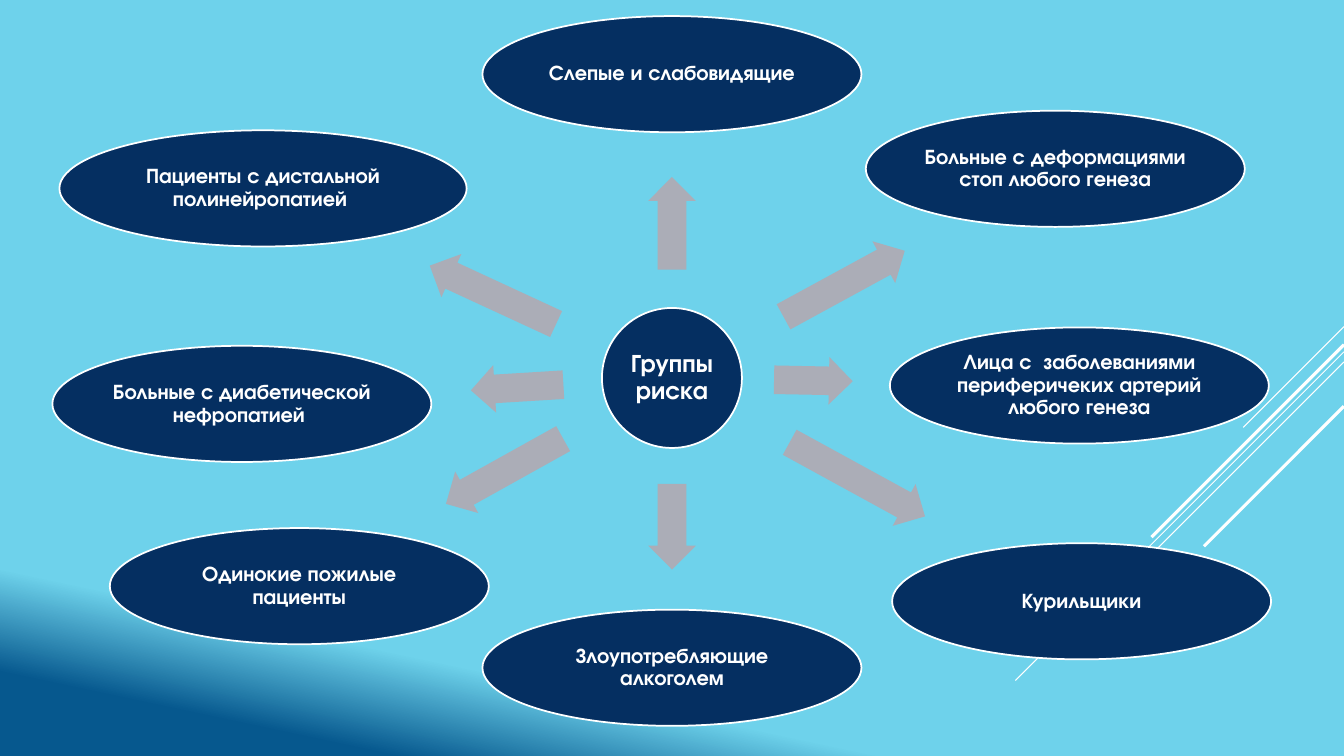
import pptx
import pptx.util
import pptx.dml.color
import pptx.enum.shapes
import pptx.enum.text
import pptx.oxml.ns
import lxml.etree

Pt = pptx.util.Pt
SHAPE = pptx.enum.shapes.MSO_SHAPE
FONT = "TeX Gyre Adventor"
WIDTH, HEIGHT = 960, 540
NAVY, GREY, WHITE = "052F61", "ABADB7", "FFFFFF"

RAYS = [(233.3, 72, 0.75), (251.3, 234.7, 0.75), (258.5, 149, 0.75),
        (246.2, 137.5, 2.25), (290.2, 100, 2.25)]

RISK_GROUPS = [
    ("Слепые и слабовидящие", (480, 53, 270.7), (480, 159.5, 66.2, 270)),
    ("Больные с деформациями стоп любого генеза", (753.8, 120.6, 270.7), (603, 202.7, 98.6, 331.4)),
    ("Лица с  заболеваниями периферичеких артерий любого генеза", (771, 275.4, 270.7), (581, 271.8, 56.2, 1.1)),
    ("Курильщики", (772.6, 429.5, 270.7), (612.4, 342.4, 110.2, 28.7)),
    ("Злоупотребляющие алкоголем", (480, 477, 270.7), (480, 376.2, 61.2, 90)),
    ("Одинокие пожилые пациенты", (213.8, 418.7, 270.7), (360.4, 336.6, 95.8, 150.9)),
    ("Больные с диабетической нефропатией ", (172.8, 288.5, 270.7), (369.4, 276.8, 66.2, 176.5)),
    ("Пациенты с дистальной полинейропатией ", (187.9, 134.6, 290.9), (352.1, 210.6, 99.4, 204.8)),
]


def rgb(value):
    return pptx.dml.color.RGBColor.from_string(value)


def paint_background(slide):
    fill = slide.background.fill
    fill.gradient()
    fill.gradient_angle = 258
    stops = [(0.82, "6ED2EB"), (0.92, "06588E")]
    for stop, (position, color) in zip(fill.gradient_stops, stops):
        stop.position = position
        stop.color.rgb = rgb(color)


def add_rays(slide, right):
    for y, run, weight in RAYS:
        s = slide.shapes.add_connector(
            pptx.enum.shapes.MSO_CONNECTOR.STRAIGHT,
            Pt(right), Pt(y), Pt(right - run), Pt(y + run))
        s.line.color.rgb = rgb(WHITE)
        s.line.width = Pt(weight)
        lxml.etree.SubElement(s._element.spPr, pptx.oxml.ns.qn("a:effectLst"))


def add_centred(slide, kind, cx, cy, width, height, color):
    s = slide.shapes.add_shape(kind, Pt(cx - width / 2), Pt(cy - height / 2), Pt(width), Pt(height))
    s.shadow.inherit = False
    s.fill.solid()
    s.fill.fore_color.rgb = rgb(color)
    return s


def add_bubble(slide, text, cx, cy, width, height, size, inset):
    s = add_centred(slide, SHAPE.OVAL, cx, cy, width, height, NAVY)
    s.line.color.rgb = rgb(WHITE)
    s.line.width = Pt(1.25)
    tf = s.text_frame
    tf.word_wrap = True
    tf.vertical_anchor = pptx.enum.text.MSO_ANCHOR.MIDDLE
    tf.margin_left = tf.margin_right = tf.margin_top = tf.margin_bottom = Pt(inset)
    p = tf.paragraphs[0]
    p.alignment = pptx.enum.text.PP_ALIGN.CENTER
    p.line_spacing = 0.9
    r = p.add_run()
    r.text = text
    r.font.name = FONT
    r.font.size = Pt(size)
    r.font.bold = True
    r.font.color.rgb = rgb(WHITE)


def add_arrow(slide, cx, cy, length, angle):
    s = add_centred(slide, SHAPE.RIGHT_ARROW, cx, cy, length, 34, GREY)
    s.line.fill.background()
    s.adjustments[0] = 0.6
    s.adjustments[1] = 0.5
    s.rotation = angle


def add_risk_diagram(slide, left, top, width, height):
    add_bubble(slide, "Группы риска", left + width / 2, top + height / 2, 100, 100, 18, 2)
    for text, (cx, cy, bubble_width), (ax, ay, length, angle) in RISK_GROUPS:
        add_arrow(slide, left + ax, top + ay, length, angle)
        add_bubble(slide, text, left + cx, top + cy, bubble_width, 83, 15, 1.5)


def main():
    prs = pptx.Presentation()
    prs.slide_width, prs.slide_height = Pt(WIDTH), Pt(HEIGHT)
    slide = prs.slides.add_slide(prs.slide_layouts[6])
    paint_background(slide)
    add_rays(slide, WIDTH)
    add_risk_diagram(slide, 0, 0, WIDTH, HEIGHT)
    prs.save("out.pptx")


if __name__ == "__main__":
    main()
